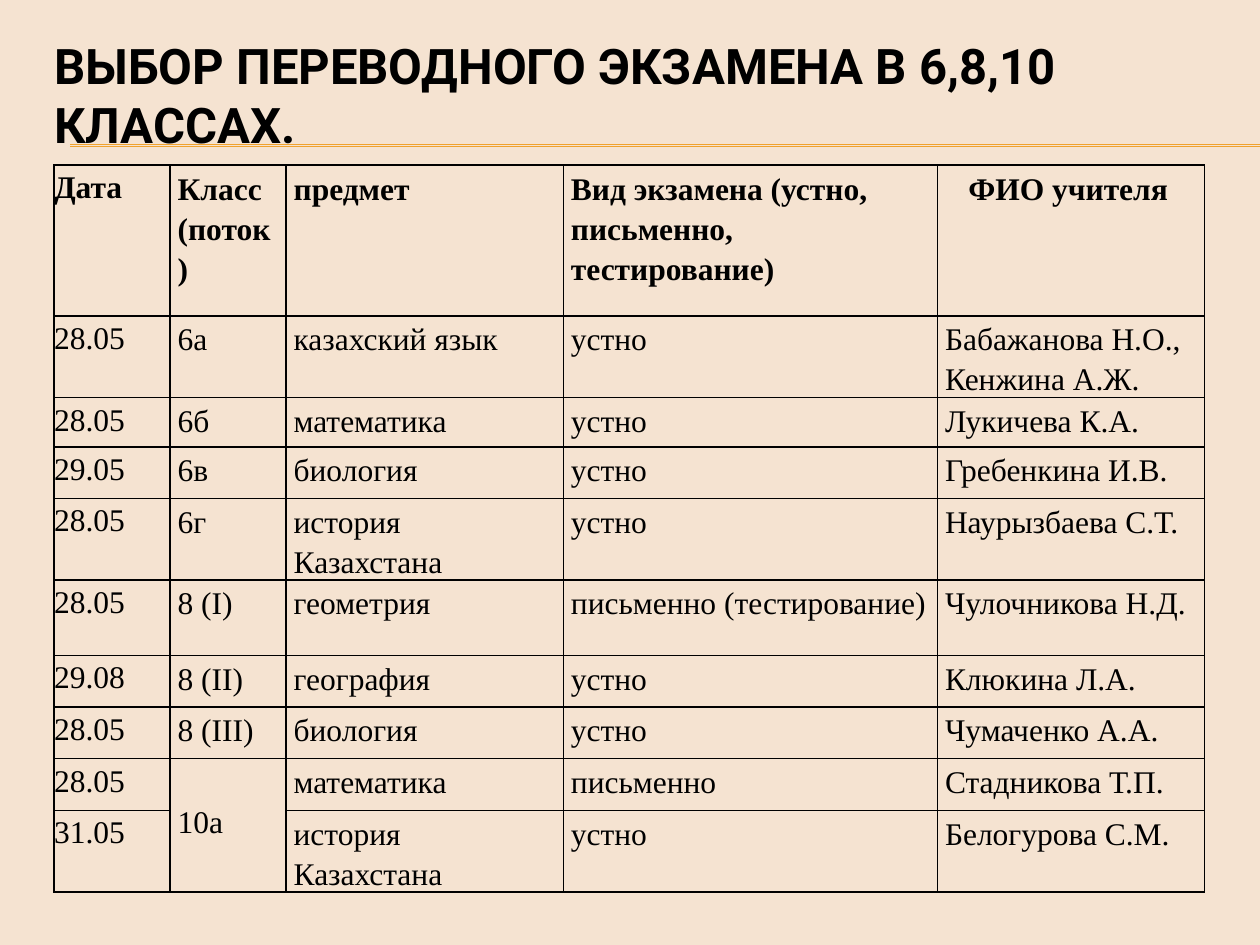
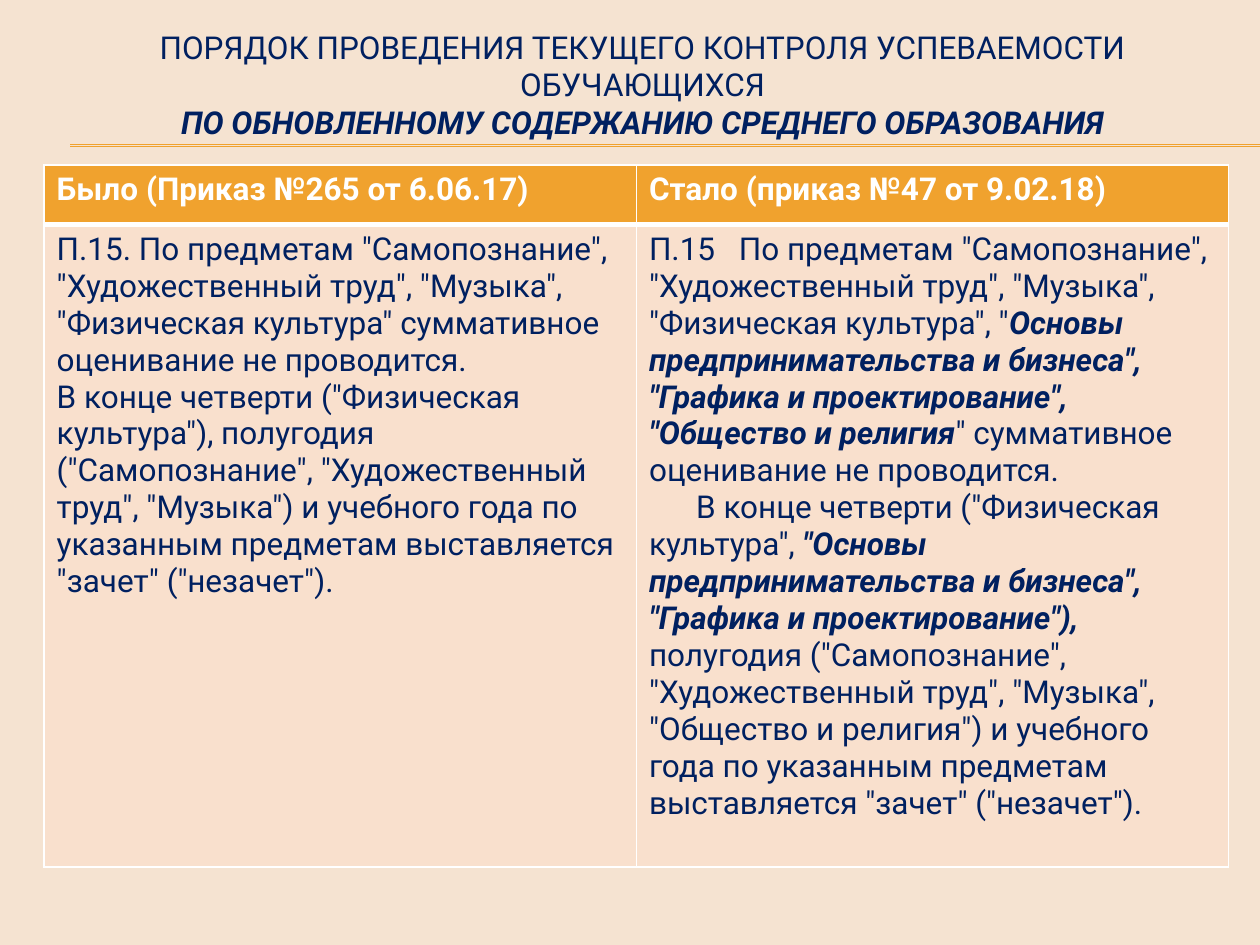
from lxml.etree import SubElement
from pptx import Presentation
from pptx.dml.color import RGBColor
from pptx.enum.shapes import MSO_CONNECTOR
from pptx.enum.text import MSO_ANCHOR, MSO_AUTO_SIZE, PP_ALIGN
from pptx.oxml.ns import qn
from pptx.util import Cm, Pt

BACKGROUND = RGBColor(0xF5, 0xE3, 0xD1)
ORANGE = RGBColor(0xF0, 0xA2, 0x2E)
PEACH = RGBColor(0xF9, 0xE0, 0xCD)
NAVY = RGBColor(0x00, 0x20, 0x60)
BLACK = RGBColor(0, 0, 0)
WHITE = RGBColor(0xFF, 0xFF, 0xFF)
TITLE_FONT = "Roboto"
TABLE_FONT = "Times New Roman"


def style_font(font, name, size, color):
    font.name = name
    font.size = Pt(size)
    font.color.rgb = color


def draw_borders(cell, color, bottom=1):
    properties = cell._tc.get_or_add_tcPr()
    for side, width in (("lnL", 1), ("lnR", 1), ("lnT", 1), ("lnB", bottom)):
        line = SubElement(properties, qn(f"a:{side}"), w=str(Pt(width)))
        fill = SubElement(line, qn("a:solidFill"))
        SubElement(fill, qn("a:srgbClr"), val=str(color))


presentation = Presentation()
presentation.slide_width = Cm(25.4)
presentation.slide_height = Cm(19.05)
background = presentation.slide_master.background.fill
background.solid()
background.fore_color.rgb = BACKGROUND

# Titles and the double rule under them
TITLES = [
    (0.84, 1.27, 28, BLACK, PP_ALIGN.LEFT,
     [("ВЫБОР ПЕРЕВОДНОГО ЭКЗАМЕНА В 6,8,10 КЛАССАХ.", True, False)]),
    (0.89, 0.53, 18, NAVY, PP_ALIGN.CENTER,
     [("ПОРЯДОК ПРОВЕДЕНИЯ ТЕКУЩЕГО КОНТРОЛЯ УСПЕВАЕМОСТИ ОБУЧАЮЩИХСЯ", False, False),
      ("ПО ОБНОВЛЕННОМУ СОДЕРЖАНИЮ СРЕДНЕГО ОБРАЗОВАНИЯ", True, True)]),
]
for left, top, size, color, alignment, lines in TITLES:
    slide = presentation.slides.add_slide(presentation.slide_layouts[5])
    for rule_top in (2.92, 2.95):
        rule = slide.shapes.add_connector(
            MSO_CONNECTOR.STRAIGHT, Cm(1.42), Cm(rule_top), Cm(25.4), Cm(rule_top))
        rule.line.color.rgb = ORANGE
        rule.line.width = Pt(0.75)
        SubElement(rule._element.spPr, qn("a:effectLst"))

    title = slide.shapes.title
    title.element.getparent().append(title.element)  # in front of the rule
    title.left, title.top, title.width, title.height = Cm(left), Cm(top), Cm(24.13), Cm(2.34)
    frame = title.text_frame
    frame.auto_size = MSO_AUTO_SIZE.NONE
    frame.vertical_anchor = MSO_ANCHOR.MIDDLE
    paragraph = frame.paragraphs[0]
    paragraph.alignment = alignment
    style_font(paragraph.font, TITLE_FONT, size, color)
    for index, (text, bold, italic) in enumerate(lines):
        if index:
            paragraph.add_line_break()
        run = paragraph.add_run()
        run.text = text
        run.font.bold, run.font.italic = bold, italic

exam_slide, order_slide = presentation.slides
# The exam title sits high in its box
exam_slide.shapes.title.text_frame.margin_bottom = Cm(1.2)

# Exam timetable
EXAM_WIDTHS = [2.34, 2.34, 5.59, 7.54, 5.38]
EXAM_HEIGHTS = [3.04, 1.52, 0.99, 1.04, 1.52, 1.52, 1.04, 1.04, 1.04, 1.52]
EXAMS = [
    ("Дата", "Класс (поток)", "предмет",
     "Вид экзамена (устно, письменно, тестирование)", "ФИО учителя"),
    ("28.05", "6а", "казахский язык", "устно", "Бабажанова Н.О., Кенжина А.Ж."),
    ("28.05", "6б", "математика", "устно", "Лукичева К.А."),
    ("29.05", "6в", "биология", "устно", "Гребенкина И.В."),
    ("28.05", "6г", "история Казахстана", "устно", "Наурызбаева С.Т."),
    ("28.05", "8 (I)", "геометрия", "письменно (тестирование)", "Чулочникова Н.Д."),
    ("29.08", "8 (II)", "география", "устно", "Клюкина Л.А."),
    ("28.05", "8 (III)", "биология", "устно", "Чумаченко А.А."),
    ("28.05", "10а", "математика", "письменно", "Стадникова Т.П."),
    ("31.05", "", "история Казахстана", "устно", "Белогурова С.М."),
]
exam_table = exam_slide.shapes.add_table(
    len(EXAMS), len(EXAM_WIDTHS), Cm(1.09), Cm(3.33),
    Cm(sum(EXAM_WIDTHS)), Cm(sum(EXAM_HEIGHTS))).table
exam_table.first_row = exam_table.horz_banding = False
for column, width in zip(exam_table.columns, EXAM_WIDTHS):
    column.width = Cm(width)
for row_index, (row, height, texts) in enumerate(zip(exam_table.rows, EXAM_HEIGHTS, EXAMS)):
    row.height = Cm(height)
    for column_index, (cell, text) in enumerate(zip(row.cells, texts)):
        side, top = (0.15, 0.03) if column_index else (0, 0)
        cell.margin_left = cell.margin_right = Cm(side)
        cell.margin_top, cell.margin_bottom = Cm(top), 0
        draw_borders(cell, BLACK)
        cell.fill.background()
        paragraph = cell.text_frame.paragraphs[0]
        paragraph.line_spacing = 1.15
        style_font(paragraph.font, TABLE_FONT, 18, BLACK)
        paragraph.font.bold = row_index == 0
        if text:
            paragraph.add_run().text = text
exam_table.cell(0, 4).margin_left = Cm(0.62)
class_cell = exam_table.cell(8, 1)
class_cell.merge(exam_table.cell(9, 1))
class_cell.margin_top = Cm(0.84)

# Old and new wording: cells hold paragraphs, paragraphs hold (text, emphasised) runs
ORDER_HEIGHTS = [1.2, 12.95]
ORDERS = [
    [[[("Было (Приказ №265 от 6.06.17)", False)]],
     [[("Стало (приказ №47 от 9.02.18)", False)]]],
    [[[('П.15. По предметам "Самопознание", "Художественный труд", "Музыка", '
        '"Физическая культура" суммативное оценивание не проводится.', False)],
      [('В конце четверти ("Физическая культура"), полугодия ("Самопознание", '
        '"Художественный труд", "Музыка") и учебного года по указанным предметам '
        'выставляется "зачет" ("незачет").', False)]],
     [[('П.15\tПо предметам "Самопознание", "Художественный труд", "Музыка", '
        '"Физическая культура", "', False),
       ('Основы предпринимательства и бизнеса", "Графика и проектирование", '
        '"Общество и религия', True),
       ('" суммативное оценивание не проводится.', False)],
      [('В конце четверти ("Физическая культура", ', False),
       ('"Основы предпринимательства и бизнеса", "Графика и проектирование"), ', True),
       ('полугодия ("Самопознание", "Художественный труд", "Музыка", '
        '"Общество и религия") и учебного года по указанным предметам '
        'выставляется "зачет" ("незачет").', False)]]],
]
order_table = order_slide.shapes.add_table(
    2, 2, Cm(0.89), Cm(3.33), Cm(23.88), Cm(sum(ORDER_HEIGHTS))).table
order_table.first_row = order_table.horz_banding = False
for row_index, (row, height, contents) in enumerate(zip(order_table.rows, ORDER_HEIGHTS, ORDERS)):
    is_header = row_index == 0
    row.height = Cm(height)
    for cell, paragraphs in zip(row.cells, contents):
        draw_borders(cell, WHITE, bottom=3 if is_header else 1)
        cell.fill.solid()
        cell.fill.fore_color.rgb = ORANGE if is_header else PEACH
        frame = cell.text_frame
        for index, runs in enumerate(paragraphs):
            paragraph = frame.add_paragraph() if index else frame.paragraphs[0]
            style_font(paragraph.font, TITLE_FONT, 18, WHITE if is_header else NAVY)
            for text, emphasised in runs:
                run = paragraph.add_run()
                run.text = text
                run.font.bold = is_header or emphasised
                run.font.italic = emphasised

# Tab after the clause number, first-line indent in the next paragraph
clause, term = order_table.cell(1, 1).text_frame.paragraphs
clause_properties = clause._p.get_or_add_pPr()
tabs = clause_properties.makeelement(qn("a:tabLst"))
SubElement(tabs, qn("a:tab"), pos=str(Cm(1.81)), algn="l")
clause_properties.insert(0, tabs)
term._p.get_or_add_pPr().set("indent", str(Cm(0.95)))

presentation.save("out.pptx")
